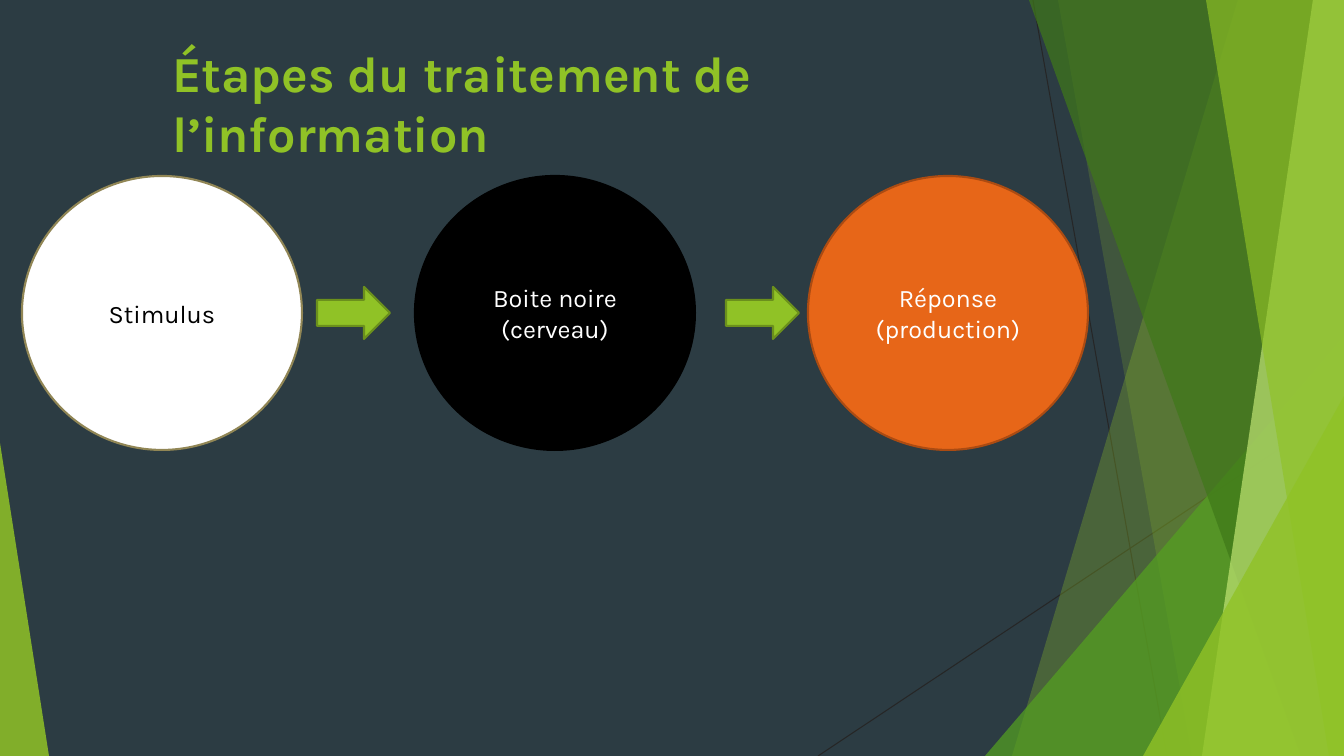
from lxml import etree
from pptx import Presentation
from pptx.dml.color import RGBColor
from pptx.enum.shapes import MSO_CONNECTOR, MSO_SHAPE
from pptx.enum.text import MSO_ANCHOR, MSO_AUTO_SIZE, PP_ALIGN
from pptx.oxml.ns import qn
from pptx.util import Pt

PX = 914400 / 100.8
WIDTH, HEIGHT = 1344, 756
FONT = "Karla"
STRAIGHT = MSO_CONNECTOR.STRAIGHT
TRIANGLE = MSO_SHAPE.ISOSCELES_TRIANGLE
OVAL = MSO_SHAPE.OVAL
RIGHT_ARROW = MSO_SHAPE.RIGHT_ARROW
TOP, MIDDLE = MSO_ANCHOR.TOP, MSO_ANCHOR.MIDDLE
LEFT, CENTER = PP_ALIGN.LEFT, PP_ALIGN.CENTER
NO_FIT = MSO_AUTO_SIZE.NONE

SLATE = RGBColor(0x2C, 0x3C, 0x43)
CHARCOAL = RGBColor(0x26, 0x26, 0x26)
LIME = RGBColor(0x90, 0xC2, 0x26)
GREEN = RGBColor(0x54, 0xA0, 0x21)
FOREST = RGBColor(0x3F, 0x78, 0x19)
PALE_LIME = RGBColor(0xC0, 0xE4, 0x74)
OLIVE = RGBColor(0x6B, 0x90, 0x1C)
WHITE = RGBColor(0xFF, 0xFF, 0xFF)
BLACK = RGBColor(0x00, 0x00, 0x00)
KHAKI = RGBColor(0x91, 0x86, 0x55)
ORANGE = RGBColor(0xE7, 0x66, 0x18)
RUST = RGBColor(0xAB, 0x4B, 0x12)


def emu(*lengths):
    return [round(length * PX) for length in lengths]


def paint(shape, color, opacity=100, outline=None):
    shape.shadow.inherit = False
    shape.fill.solid()
    shape.fill.fore_color.rgb = color
    if opacity < 100:
        tint = shape.fill._xPr.find(qn("a:solidFill"))[0]
        etree.SubElement(tint, qn("a:alpha"), val=str(opacity * 1000))
    if outline is None:
        shape.line.fill.background()
    else:
        shape.line.color.rgb = outline
        shape.line.width = Pt(1.5)


deck = Presentation()
deck.slide_width, deck.slide_height = emu(WIDTH, HEIGHT)
page = deck.slides.add_slide(deck.slide_layouts[5])
page.background.fill.solid()
page.background.fill.fore_color.rgb = SLATE
shapes = page.shapes

for ends in [(1033, 0, 1167, HEIGHT), (WIDTH, 406, 818, HEIGHT)]:
    ray = shapes.add_connector(STRAIGHT, *emu(*ends))
    ray.line.color.rgb = CHARCOAL
    ray.line.width = Pt(0.75)
    etree.SubElement(ray._element.spPr, qn("a:effectLst"))

facets = [
    ("band", 1238, 1012, LIME, 30),
    ("band", 1058, 1192, LIME, 20),
    ("triangle", 985, 336, 359, 1, GREEN, 72),
    ("band", 1029, 1301, FOREST, 70),
    ("band", 1313, 1202, PALE_LIME, 70),
    ("band", 1206, 1329, LIME, 65),
    ("triangle", 1143, 396, 201, 1, LIME, 80),
    ("triangle", 0, 443, 49, 0, LIME, 85),
]
for kind, *numbers, color, opacity in facets:
    if kind == "band":
        top_x, bottom_x = numbers
        builder = shapes.build_freeform(*emu(top_x, 0))
        corners = [(WIDTH, 0), (WIDTH, HEIGHT), (bottom_x, HEIGHT)]
        builder.add_line_segments([emu(*corner) for corner in corners])
        facet = builder.convert_to_shape()
    else:
        left, top, width, apex = numbers
        facet = shapes.add_shape(TRIANGLE, *emu(left, top, width, HEIGHT - top))
        facet.adjustments[0] = apex
    paint(facet, color, opacity)

title = shapes.title
title.left, title.top, title.width, title.height = emu(162, 37, 926, 72)
frame = title.text_frame
frame.text = "Étapes du traitement de l’information"
frame_format = {"word_wrap": True, "auto_size": NO_FIT, "vertical_anchor": TOP,
                "margin_right": emu(100)[0]}
for name, value in frame_format.items():
    setattr(frame, name, value)
para = frame.paragraphs[0]
para.alignment = LEFT
para.font.color.rgb = LIME
for name, value in {"name": FONT, "size": Pt(36), "bold": True}.items():
    setattr(para.font, name, value)

stages = [
    ("Stimulus", WHITE, KHAKI, BLACK),
    ("Boite noire (cerveau)", BLACK, BLACK, WHITE),
    ("Réponse (production)", ORANGE, RUST, WHITE),
]
for index, (label, color, outline, ink) in enumerate(stages):
    circle = shapes.add_shape(OVAL, *emu(22 + 393 * index, 176, 280, 274))
    paint(circle, color, outline=outline)
    frame = circle.text_frame
    frame.text = label
    frame.word_wrap = True
    frame.vertical_anchor = MIDDLE
    para = frame.paragraphs[0]
    para.alignment = CENTER
    para.font.color.rgb = ink
    for name, value in {"name": FONT, "size": Pt(18)}.items():
        setattr(para.font, name, value)

for left in (317, 726):
    arrow = shapes.add_shape(RIGHT_ARROW, *emu(left, 287, 73, 52))
    paint(arrow, LIME, outline=OLIVE)

deck.save("out.pptx")
